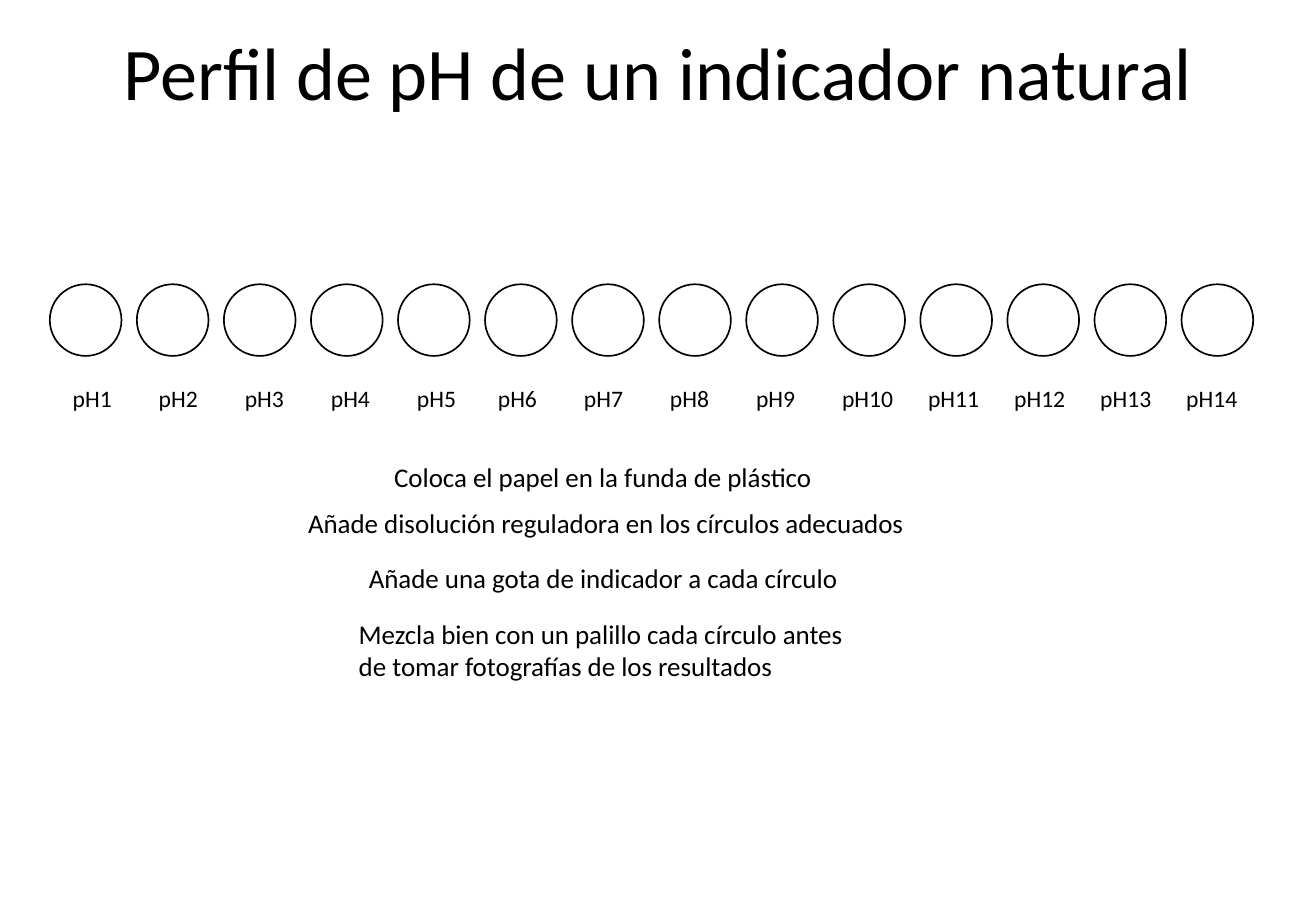
from pptx import Presentation
from pptx.dml.color import RGBColor
from pptx.enum.shapes import MSO_SHAPE as SHAPE
from pptx.enum.text import MSO_ANCHOR as ANCHOR, MSO_AUTO_SIZE as FIT
from pptx.util import Pt

BLACK, WHITE = "000000", "FFFFFF"
STEPS = [
    ("Coloca el papel en la funda de plástico", 51, 0, 297.5, 26.5),
    ("Añade disolución reguladora en los círculos adecuados", 0, 27.5, 408, 26.5),
    ("Añade una gota de indicador a cada círculo", 36, 60, 303, 26.5),
    ("Mezcla bien con un palillo cada círculo antes de tomar fotografías "
     "de los resultados", 30, 93, 303, 46),
]


def color(value):
    return RGBColor.from_string(value)


def add_text(shapes, text, box, size, **frame):
    tf = shapes.add_textbox(*map(Pt, box)).text_frame
    settings = {"word_wrap": True, "auto_size": FIT.SHAPE_TO_FIT_TEXT, **frame}
    for name, value in settings.items():
        setattr(tf, name, value)
    p = tf.paragraphs[0]
    r = p.add_run()
    r.text = text
    for name, value in {"name": "Calibri", "size": Pt(size)}.items():
        setattr(r.font, name, value)
    r.font.color.rgb = color(BLACK)
    return p


def add_title(s, box):
    p = add_text(s.shapes, "Perfil de pH de un indicador natural", box, 44,
                 auto_size=FIT.NONE, vertical_anchor=ANCHOR.MIDDLE)
    p.line_spacing = 0.9


def add_ph_scale(s, left, top, count=14, diameter=42.5):
    shapes = s.shapes.add_group_shape().shapes
    for i in range(count):
        sp = shapes.add_shape(SHAPE.OVAL, Pt(left + 51.6 * i), Pt(top),
                              Pt(diameter), Pt(diameter))
        sp.shadow.inherit = False
        sp.fill.solid()
        sp.fill.fore_color.rgb = color(WHITE)
        sp.line.color.rgb = color(BLACK)
        sp.line.width = Pt(1)
    for i in range(count):
        shift = 6.5 if i < 5 else 3.5
        box = (left + shift + 51 * i, top + 55.5, 54.5, 24.5)
        add_text(shapes, f"pH{i + 1}", box, 14)


def add_steps(s, left, top):
    shapes = s.shapes.add_group_shape().shapes
    for text, dx, dy, width, height in STEPS:
        add_text(shapes, text, (left + dx, top + dy, width, height), 16)


def main():
    prs = Presentation()
    prs.slide_width, prs.slide_height = Pt(780), Pt(540)
    s = prs.slides.add_slide(prs.slide_layouts[6])
    add_title(s, (66.25, -7, 672.5, 104.5))
    add_ph_scale(s, 29.5, 168.5)
    add_steps(s, 175.5, 269.25)
    prs.save("out.pptx")


if __name__ == "__main__":
    main()
